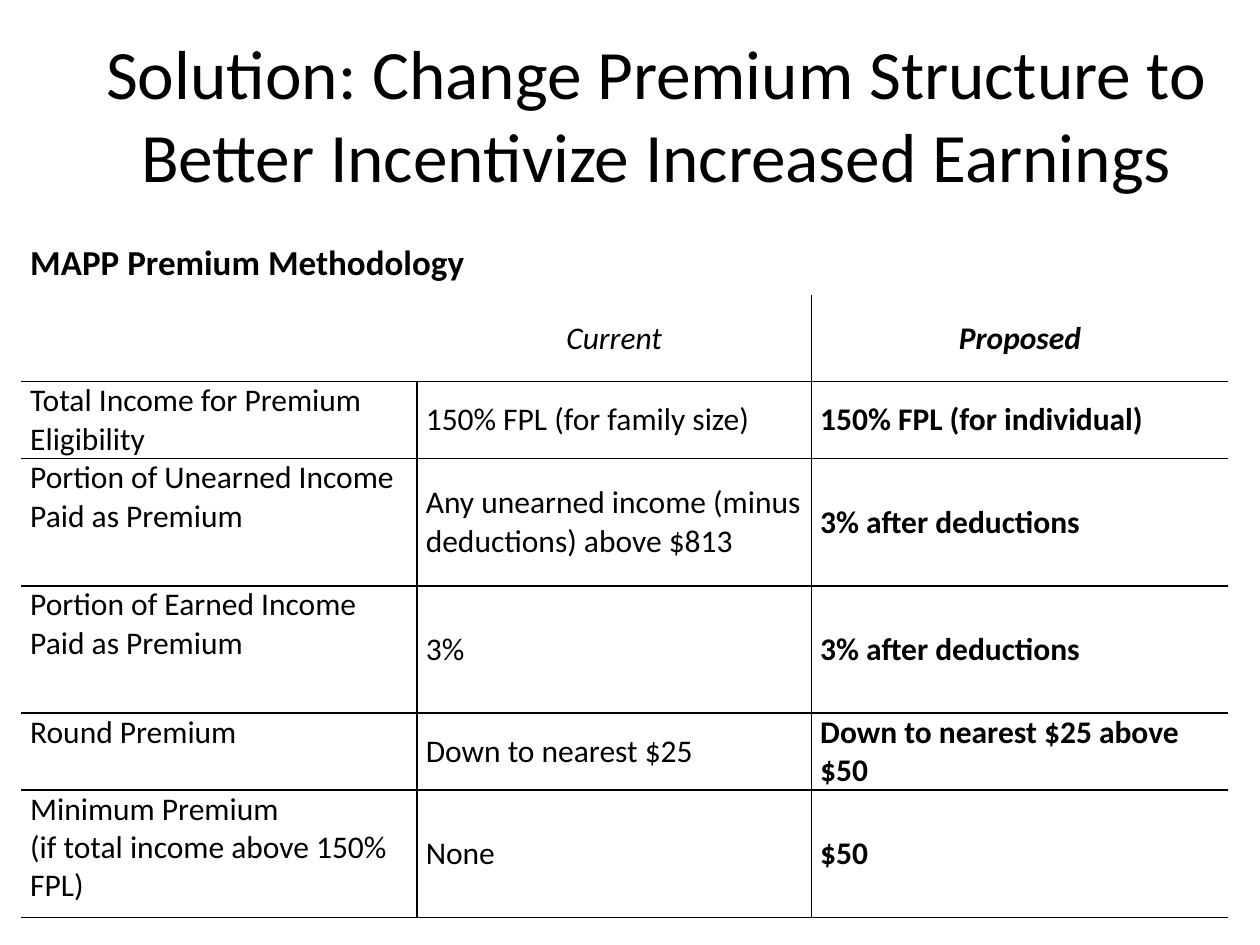
from lxml import etree
from pptx import Presentation
from pptx.dml.color import RGBColor
from pptx.enum import text as txt
from pptx.oxml.ns import qn
from pptx.util import Inches, Pt

BLACK = "000000"
MIDDLE, TOP, BOTTOM = txt.MSO_ANCHOR.MIDDLE, txt.MSO_ANCHOR.TOP, txt.MSO_ANCHOR.BOTTOM


def write(frame, content, size=18, bold=False, italic=False, align=txt.PP_ALIGN.LEFT, color=BLACK):
    """Fill a text frame, one paragraph per line of content."""
    frame.text = content
    for paragraph in frame.paragraphs:
        paragraph.alignment = align
        font = paragraph.runs[0].font
        font.name, font.size, font.bold, font.italic = "Calibri", Pt(size), bold, italic
        font.color.rgb = RGBColor.from_string(color)


def set_borders(cell, visible, color=BLACK):
    """Draw the sides named in visible (L, R, T, B) and clear the others."""
    props = cell._tc.get_or_add_tcPr()
    for place, side in enumerate("LRTB"):
        line = etree.Element(qn(f"a:ln{side}"), w=str(Pt(1)))
        if side in visible:
            fill = etree.SubElement(line, qn("a:solidFill"))
            etree.SubElement(fill, qn("a:srgbClr"), val=color)
        else:
            etree.SubElement(line, qn("a:noFill"))
        props.insert(place, line)


prs = Presentation()
prs.slide_width, prs.slide_height = Inches(10), Inches(7.5)
slide = prs.slides.add_slide(prs.slide_layouts[5])

# Title
title = slide.shapes.title
title.left, title.top, title.width, title.height = (Inches(v) for v in (0.5, 0.3, 9.42, 1.2))
title.text_frame.vertical_anchor = MIDDLE
write(title.text_frame, "Solution: Change Premium Structure to Better Incentivize Increased Earnings",
      size=39.6, align=txt.PP_ALIGN.CENTER)

# Premium table: heading row, column labels, then one row per rule
premium_rows = [
    ("MAPP Premium Methodology", "", ""),
    ("", "Current", "Proposed"),
    ("Total Income for Premium Eligibility", "150% FPL (for family size)", "150% FPL (for individual)"),
    ("Portion of Unearned Income Paid as Premium",
     "Any unearned income (minus deductions) above $813", "3% after deductions"),
    ("Portion of Earned Income Paid as Premium", "3%", "3% after deductions"),
    ("Round Premium", "Down to nearest $25", "Down to nearest $25 above $50"),
    ("Minimum Premium\n(if total income above 150% FPL)", "None", "$50"),
]
column_widths = [3.14, 3.13, 3.31]
row_heights = [0.84, 0.69, 0.55, 1.01, 1.01, 0.55, 1.01]
premiums = slide.shapes.add_table(len(row_heights), len(column_widths), Inches(0.17), Inches(1.5),
                                  Inches(sum(column_widths)), Inches(sum(row_heights))).table
premiums.first_row = premiums.horz_banding = False
for column, width in zip(premiums.columns, column_widths):
    column.width = Inches(width)
for row, height in zip(premiums.rows, row_heights):
    row.height = Inches(height)

for r, row_texts in enumerate(premium_rows):
    for c, content in enumerate(row_texts):
        cell = premiums.cell(r, c)
        cell.fill.background()
        cell.margin_left = cell.margin_right = Inches(0.07)
        cell.margin_top = cell.margin_bottom = 0
        cell.vertical_anchor = MIDDLE if c else TOP
        if content:
            label = r == 1
            write(cell.text_frame, content, size=18 if r else 20, bold=r == 0 or c == 2, italic=label,
                  align=txt.PP_ALIGN.CENTER if label else txt.PP_ALIGN.LEFT)
        # Rules under each row from the labels down, and between columns
        sides = "B" if r >= 1 else ""
        sides += "T" if r >= 2 else ""
        sides += "R" if (r >= 2 and c < 2) or (r == 1 and c == 1) else ""
        sides += "L" if (r >= 2 and c > 0) or (r == 1 and c == 2) else ""
        set_borders(cell, sides)

# The heading spans the table and sits low in its row
heading = premiums.cell(0, 0)
heading.merge(premiums.cell(0, 2))
heading.vertical_anchor = BOTTOM
heading.margin_bottom = Inches(0.08)

prs.save("out.pptx")
